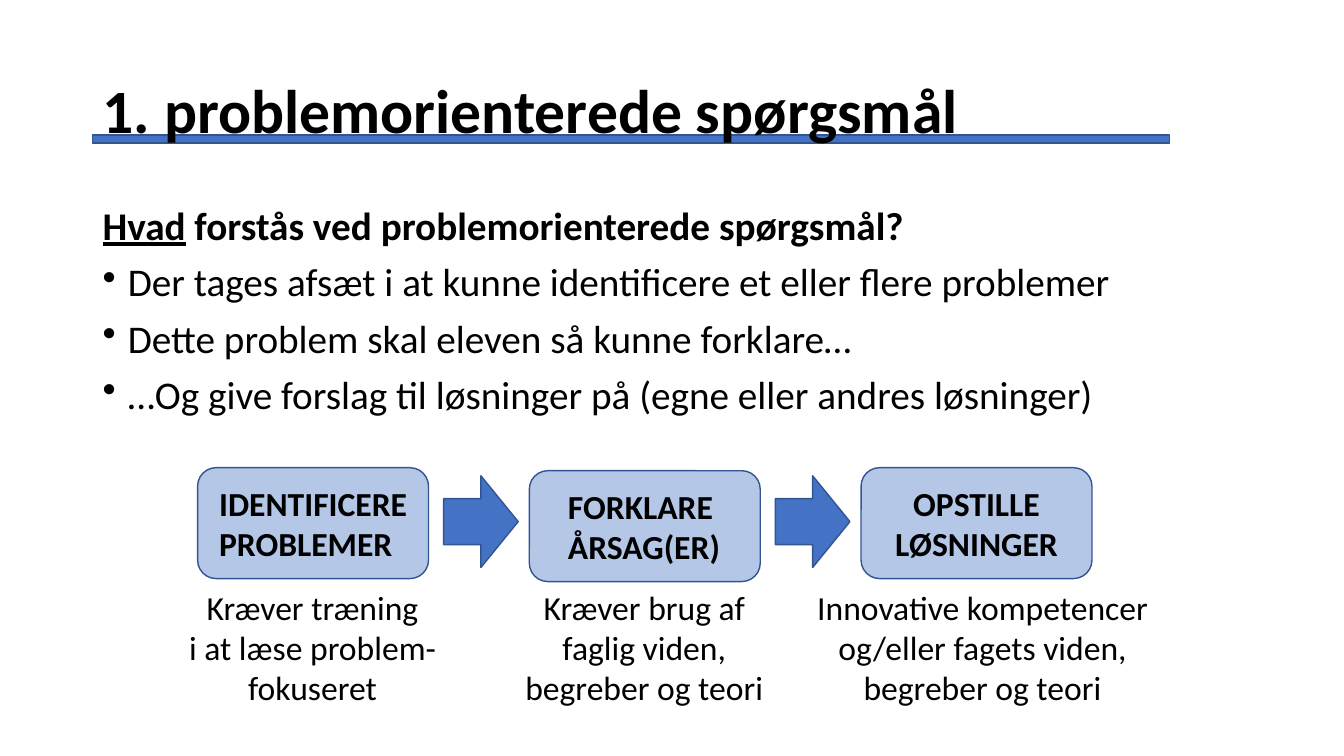
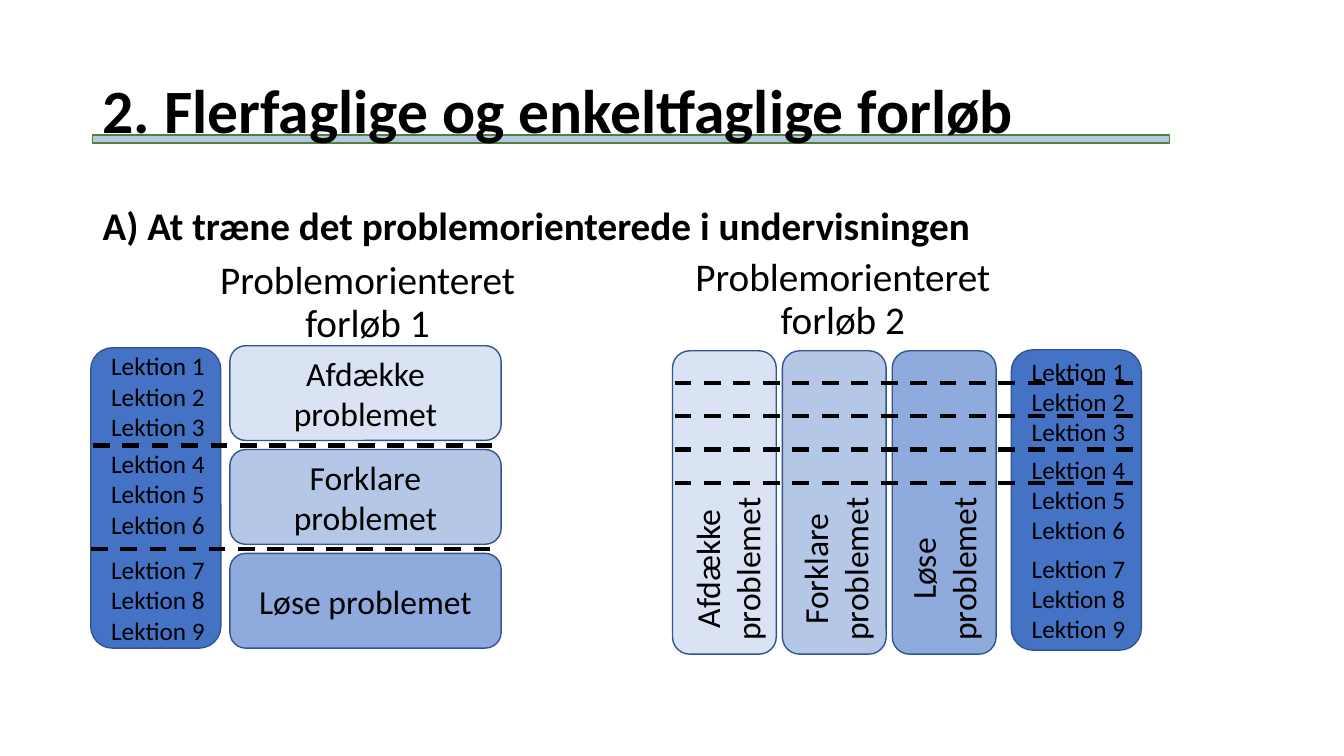
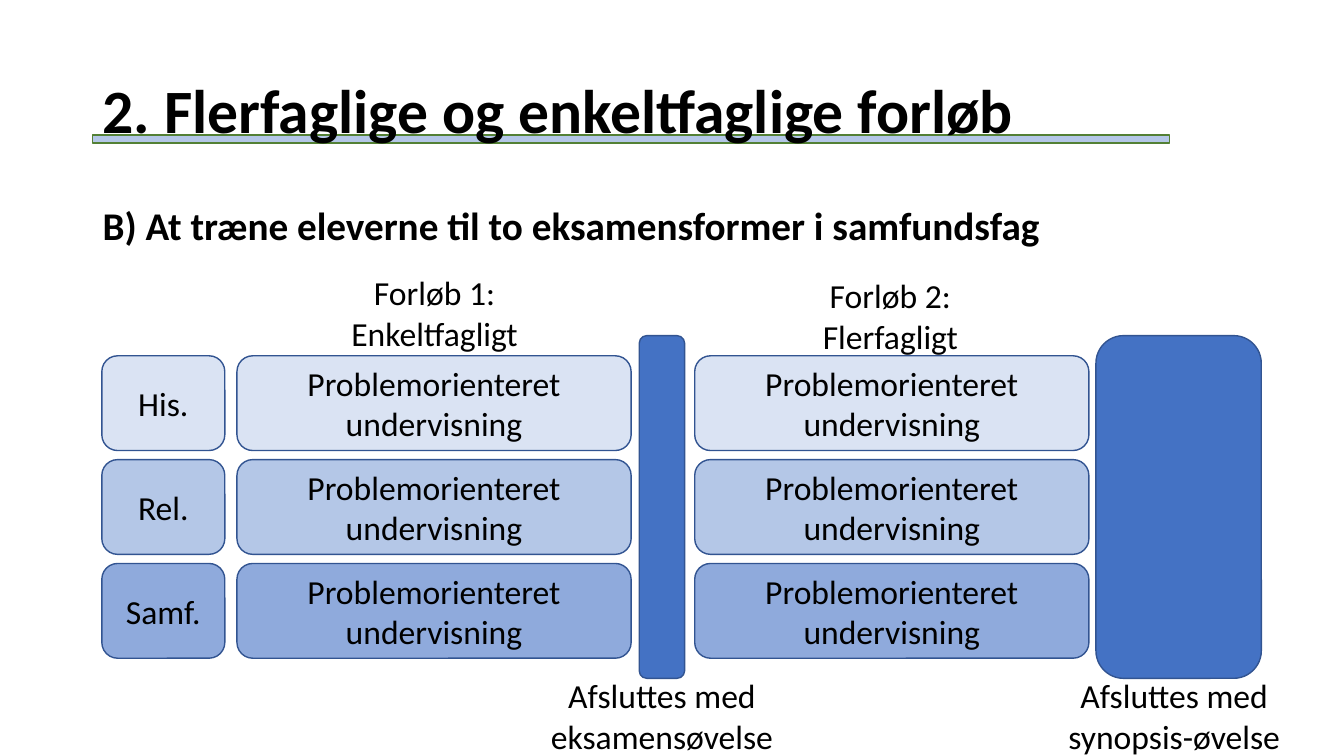
from lxml.etree import SubElement
from pptx import Presentation
from pptx.dml.color import RGBColor
from pptx.enum.dml import MSO_LINE
from pptx.enum.shapes import MSO_CONNECTOR, MSO_SHAPE
from pptx.enum.text import MSO_ANCHOR, PP_ALIGN
from pptx.oxml.ns import qn
from pptx.util import Inches, Pt

FONT = "Calibri"
BLACK = "000000"
BLUE = "4472C4"
BORDER = "325491"
GREEN = "538035"
TINTS = ["DAE3F3", "B4C7E7", "8FAADC"]
LIGHT_BLUE = TINTS[1]


def add_shape(slide, kind, left, top, width, height, fill, border=BORDER):
    shape = slide.shapes.add_shape(
        kind, Inches(left), Inches(top), Inches(width), Inches(height))
    shape.shadow.inherit = False
    shape.fill.solid()
    shape.fill.fore_color.rgb = RGBColor.from_string(fill)
    shape.line.color.rgb = RGBColor.from_string(border)
    shape.line.width = Pt(1)
    return shape


def write(target, lines, size=24, bold=False, align=PP_ALIGN.CENTER,
          anchor=MSO_ANCHOR.TOP, spacing=1.0, before=0, box=None):
    """Write paragraphs in a shape, or in a new text box on a slide."""
    if box:
        target = target.shapes.add_textbox(*[Inches(value) for value in box])
    frame = target.text_frame
    frame.word_wrap = True
    frame.vertical_anchor = anchor
    frame.text = "\n".join(lines)
    for paragraph in frame.paragraphs:
        paragraph.alignment = align
        paragraph.line_spacing = spacing
        paragraph.space_before = Pt(before)
        paragraph.font.name = FONT
        paragraph.font.size = Pt(size)
        paragraph.font.bold = bold
        paragraph.font.color.rgb = RGBColor.from_string(BLACK)
    return target


presentation = Presentation()
presentation.slide_width = Inches(13.33)
presentation.slide_height = Inches(7.5)

# Shared title, title bar and heading
headers = [
    ("1. problemorienterede spørgsmål", BLUE, BORDER, None),
    ("2. Flerfaglige og enkeltfaglige forløb", LIGHT_BLUE, GREEN,
     "A) At træne det problemorienterede i undervisningen"),
    ("2. Flerfaglige og enkeltfaglige forløb", LIGHT_BLUE, GREEN,
     "B) At træne eleverne til to eksamensformer i samfundsfag"),
]
slides = []
for title, bar_fill, bar_border, heading in headers:
    slide = presentation.slides.add_slide(presentation.slide_layouts[6])
    add_shape(slide, MSO_SHAPE.RECTANGLE, 0.92, 1.34, 10.68, 0.08, bar_fill, bar_border)
    write(slide, [title], 44, True, PP_ALIGN.LEFT, MSO_ANCHOR.MIDDLE, 0.9,
          box=(0.92, 0.4, 11.5, 1.45))
    if heading:
        write(slide, [heading], 28, True, PP_ALIGN.LEFT, spacing=0.9, before=10,
              box=(0.92, 2, 11.5, 0.6))
    slides.append(slide)
questions, lessons, exams = slides

# Slide 1: definition and the three steps
body = write(questions, [
    "",
    "Der tages afsæt i at kunne identificere et eller flere problemer",
    "Dette problem skal eleven så kunne forklare…",
    "…Og give forslag til løsninger på (egne eller andres løsninger)",
], 28, align=PP_ALIGN.LEFT, spacing=0.9, before=10, box=(0.92, 2, 11.5, 2.5))
question, *bullets = body.text_frame.paragraphs
question.font.bold = True
keyword = question.add_run()
keyword.text = "Hvad"
keyword.font.underline = True
question.add_run().text = " forstås ved problemorienterede spørgsmål?"
for paragraph in bullets:
    properties = paragraph._p.get_or_add_pPr()
    properties.set("marL", str(Inches(0.25)))
    properties.set("indent", str(-Inches(0.25)))
    bullet_font = properties.find(qn("a:defRPr"))
    bullet = SubElement(properties, qn("a:buChar"), char="•")
    if bullet_font is not None:
        bullet_font.addprevious(bullet)

steps = [
    ("IDENTIFICERE PROBLEMER", 4.64, PP_ALIGN.LEFT, 0.16),
    ("FORKLARE ÅRSAG(ER)", 4.67, PP_ALIGN.LEFT, 0.33),
    ("OPSTILLE LØSNINGER", 4.64, PP_ALIGN.CENTER, 0.05),
]
for index, (label, top, align, margin) in enumerate(steps):
    left = 1.96 + 3.29 * index
    step = add_shape(questions, MSO_SHAPE.ROUNDED_RECTANGLE, left, top, 2.29, 1.1, LIGHT_BLUE)
    write(step, [label], bold=True, align=align, anchor=MSO_ANCHOR.MIDDLE)
    step.text_frame.margin_left = Inches(margin)
    step.text_frame.margin_right = Inches(0.05)
    if index < 2:
        add_shape(questions, MSO_SHAPE.RIGHT_ARROW, left + 2.44, 4.72, 0.74, 0.91, BLUE)

for left, width, lines in [
    (1.75, 2.7, ["Kræver træning", "i at læse problem-", "fokuseret"]),
    (5.04, 2.7, ["Kræver brug af faglig viden, begreber og teori"]),
    (7.86, 3.77, ["Innovative kompetencer og/eller fagets viden, begreber og teori"]),
]:
    write(questions, lines, box=(left, 5.77, width, 1.31))

# Slide 2: two ways to spread the phases over nine lessons
phases = ["Afdække problemet", "Forklare problemet", "Løse problemet"]
for index, (phase, tint) in enumerate(zip(phases, TINTS)):
    row = add_shape(lessons, MSO_SHAPE.ROUNDED_RECTANGLE,
                    2.28, 3.43 + 1.03 * index, 2.69, 0.94, tint)
    write(row, [phase], anchor=MSO_ANCHOR.MIDDLE)
    add_shape(lessons, MSO_SHAPE.ROUNDED_RECTANGLE,
              6.67 + 1.09 * index, 3.48, 1.03, 3.01, tint)
    column_label = write(lessons, [phase], box=(6.1 + 1.07 * index, 5.19, 2.23, 0.91))
    column_label.rotation = 270

lesson_names = [f"Lektion {number}" for number in range(1, 10)]
for left, top, gap_before_seven in [(0.9, 3.45, 11), (10.03, 3.47, 6)]:
    column = add_shape(lessons, MSO_SHAPE.ROUNDED_RECTANGLE, left, top, 1.29, 2.98, BLUE)
    write(column, lesson_names, 18, align=PP_ALIGN.LEFT, anchor=MSO_ANCHOR.MIDDLE)
    frame = column.text_frame
    frame.margin_left = Inches(0.14)
    frame.margin_right = frame.margin_top = frame.margin_bottom = 0
    frame.paragraphs[3].space_before = Pt(5)
    frame.paragraphs[6].space_before = Pt(gap_before_seven)

for left, top, width, course in [(1.89, 2.54, 3.51, 1), (6.48, 2.51, 3.76, 2)]:
    write(lessons, [f"Problemorienteret forløb {course}"], 28, spacing=0.9, before=10,
          box=(left, top, width, 1.03))

dividers = [(0.92, 4.42, 4.05), (0.9, 5.45, 4.05)]
dividers += [(6.69, 3.8 + 0.33 * index, 4.63) for index in range(4)]
for left, top, length in dividers:
    divider = lessons.shapes.add_connector(
        MSO_CONNECTOR.STRAIGHT, Inches(left), Inches(top), Inches(left + length), Inches(top))
    divider.line.color.rgb = RGBColor.from_string(BLACK)
    divider.line.width = Pt(3)
    divider.line.dash_style = MSO_LINE.DASH
    SubElement(divider._element.spPr, qn("a:effectLst"))

# Slide 3: three subjects through two courses, each ending in an exam exercise
teaching = "Problemorienteret undervisning"
for index, (subject, tint) in enumerate(zip(["His.", "Rel.", "Samf."], TINTS)):
    for left, width, label in [(1.01, 1.22, subject), (2.35, 3.91, teaching),
                               (6.89, 3.91, teaching)]:
        cell = add_shape(exams, MSO_SHAPE.ROUNDED_RECTANGLE,
                         left, 3.53 + 1.03 * index, width, 0.94, tint)
        write(cell, [label], anchor=MSO_ANCHOR.MIDDLE)

for left, width in [(6.34, 0.45), (10.87, 1.64)]:
    add_shape(exams, MSO_SHAPE.ROUNDED_RECTANGLE, left, 3.33, width, 3.4, BLUE)

for left, top, width, label in [
    (2.97, 2.65, 2.68, "Forløb 1: Enkeltfagligt"),
    (7.49, 2.68, 2.68, "Forløb 2: Flerfagligt"),
    (4.92, 6.65, 3.29, "Afsluttes med eksamensøvelse"),
    (10, 6.65, 3.29, "Afsluttes med synopsis-øvelse"),
]:
    write(exams, [label], box=(left, top, width, 0.91))

presentation.save("out.pptx")
